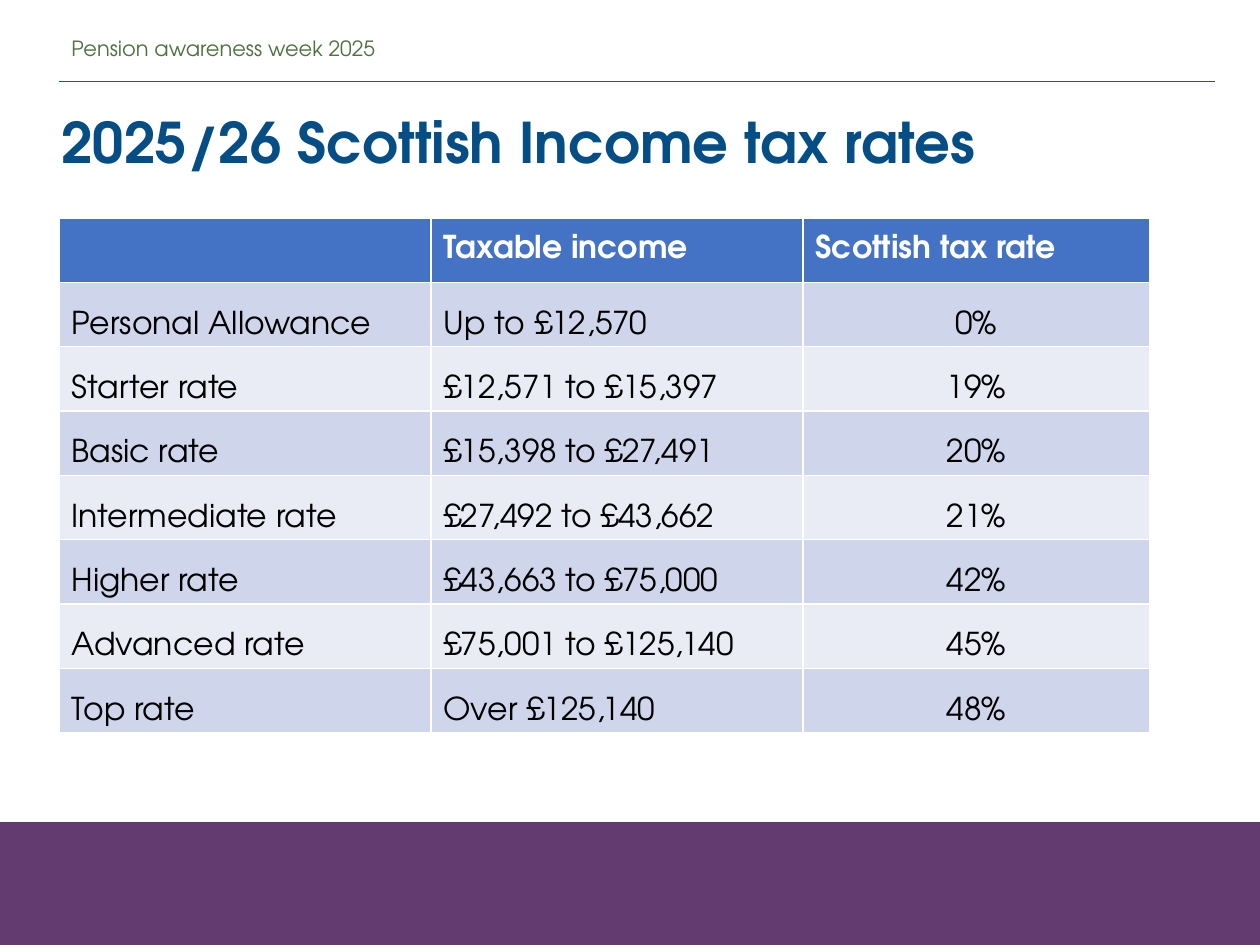
import pptx
import pptx.util
import pptx.dml.color
import pptx.enum.shapes
import pptx.enum.text
import pptx.oxml.ns
from dataclasses import dataclass
from lxml import etree

Anchor = pptx.enum.text.MSO_ANCHOR
Align = pptx.enum.text.PP_ALIGN


@dataclass(frozen=True)
class Theme:
    face: str = "TeX Gyre Adventor"
    band: str = "633B71"
    rule: str = "0B5E74"
    label: str = "4F7040"
    title: str = "044D85"
    head: str = "4472C4"
    rows: tuple = ("CFD5EA", "E9EBF5")
    white: str = "FFFFFF"
    black: str = "000000"
    big: int = 32
    mid: int = 18
    small: int = 12


def px(*sizes):
    return [pptx.util.Emu(round(size * 914400 / 126)) for size in sizes]


def rgb(code):
    return pptx.dml.color.RGBColor.from_string(code)


class Page:
    def __init__(self, deck, theme):
        self.theme = theme
        self.slide = deck.slides.add_slide(deck.slide_layouts[5])
        self.shapes = self.slide.shapes

    def style(self, para, size, color, bold=False, align=Align.LEFT):
        para.alignment = align
        font = para.font
        font.name, font.size, font.bold = self.theme.face, pptx.util.Pt(size), bold
        font.color.rgb = rgb(color)

    def band(self, *box):
        shape = self.shapes.add_shape(pptx.enum.shapes.MSO_SHAPE.RECTANGLE, *px(*box))
        shape.shadow.inherit = False
        shape.fill.solid()
        shape.fill.fore_color.rgb = shape.line.color.rgb = rgb(self.theme.band)
        shape.line.width = pptx.util.Pt(1)

    def rule(self, *ends):
        kind = pptx.enum.shapes.MSO_CONNECTOR.STRAIGHT
        line = self.shapes.add_connector(kind, *px(*ends))
        line.line.color.rgb = rgb(self.theme.rule)
        line.line.width = pptx.util.Pt(0.5)
        etree.SubElement(line._element.spPr, pptx.oxml.ns.qn("a:effectLst"))

    def label(self, text, *box):
        frame = self.shapes.add_textbox(*px(*box)).text_frame
        frame.word_wrap = True
        frame.vertical_anchor = Anchor.MIDDLE
        para = frame.paragraphs[0]
        para.text = text
        para.line_spacing = 0.9
        self.style(para, self.theme.small, self.theme.label)

    def title(self, text, *box):
        shape = self.shapes.title
        shape.left, shape.top, shape.width, shape.height = px(*box)
        frame = shape.text_frame
        frame.text = text
        frame.vertical_anchor = Anchor.MIDDLE
        self.style(frame.paragraphs[0], self.theme.big, self.theme.title, True)

    def table(self, data, left, top, widths, height):
        box = px(left, top, sum(widths), height)
        table = self.shapes.add_table(len(data), len(widths), *box).table
        for col, width in zip(table.columns, px(*widths)):
            col.width = width
        for r, row in enumerate(data):
            for c, text in enumerate(row):
                self.cell(table.cell(r, c), text, r, c)

    def cell(self, cell, text, r, c):
        theme, head = self.theme, r == 0
        cell.text = text
        cell.vertical_anchor = Anchor.MIDDLE if head else Anchor.BOTTOM
        cell.fill.solid()
        cell.fill.fore_color.rgb = rgb(theme.head if head else theme.rows[(r - 1) % 2])
        align = Align.CENTER if c == 2 and not head else Align.LEFT
        color = theme.white if head else theme.black
        self.style(cell.text_frame.paragraphs[0], theme.mid, color, head, align)


RATES = [
    ("", "Taxable income", "Scottish tax rate"),
    ("Personal Allowance", "Up to £12,570", "0%"),
    ("Starter rate", "£12,571 to £15,397", "19%"),
    ("Basic rate", "£15,398 to £27,491", "20%"),
    ("Intermediate rate", "£27,492 to £43,662", "21%"),
    ("Higher rate", "£43,663 to £75,000", "42%"),
    ("Advanced rate", "£75,001 to £125,140", "45%"),
    ("Top rate", "Over £125,140", "48%"),
]


def main():
    deck = pptx.Presentation()
    deck.slide_width, deck.slide_height = px(1260, 945)
    page = Page(deck, Theme())

    # Footer band
    page.band(0, 823, 1260, 122)

    # Header and title
    page.rule(59, 81, 1215, 81)
    page.label("Pension awareness week 2025", 59, 34, 820, 32)
    page.title("2025/26 Scottish Income tax rates", 49, 101, 1176, 81)

    # Tax rates
    page.table(RATES, 59, 218, (372, 372, 347), 515)

    deck.save("out.pptx")


if __name__ == "__main__":
    main()
